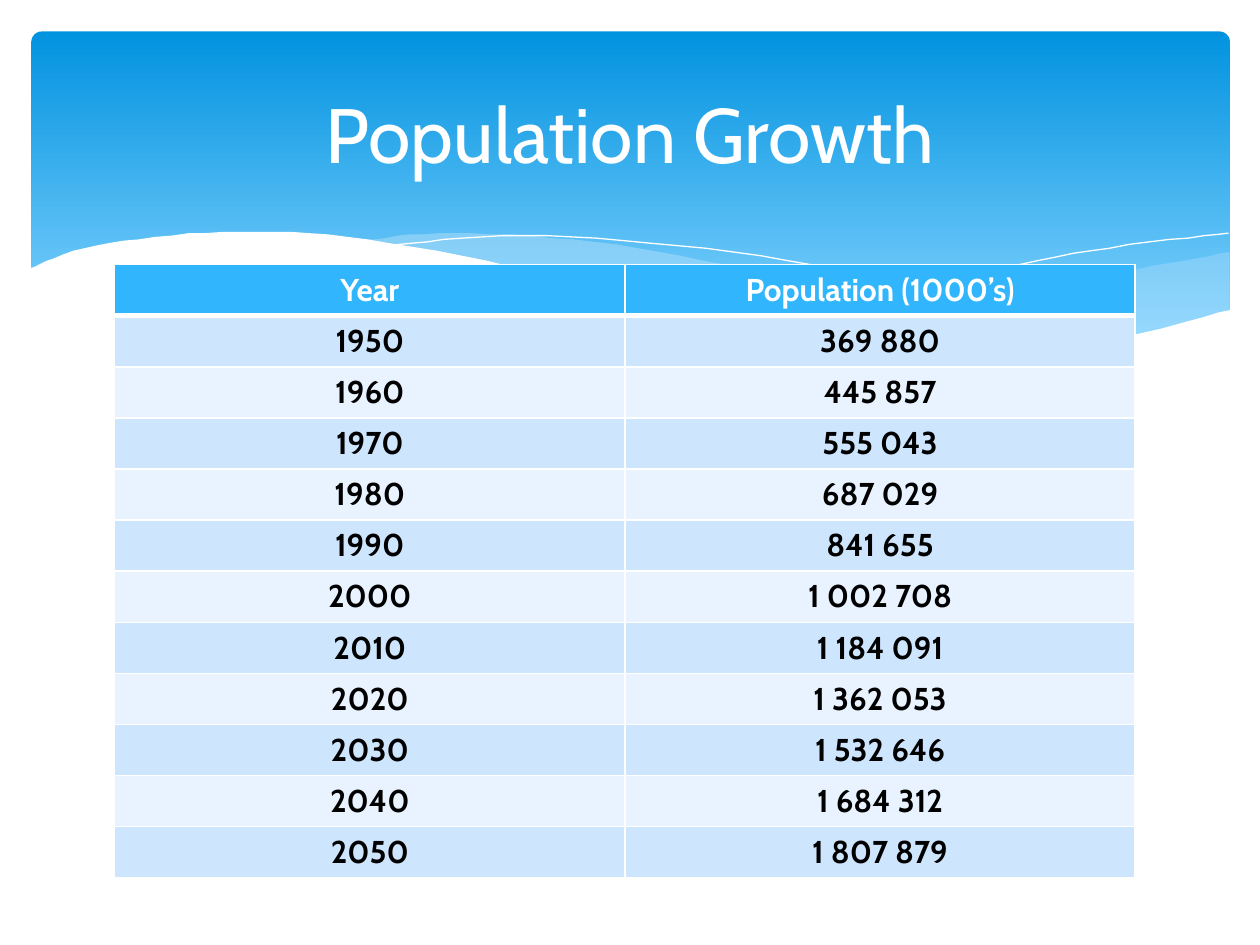
from lxml import etree
from pptx import Presentation
from pptx import util as u
from pptx.dml.color import RGBColor
from pptx.enum import shapes, text
from pptx.oxml import ns

PX = 9144
HUES = {"top": "0293E0", "low": "83D3FE", "mist": "C6E7FC", "white": "FFFFFF",
        "head": "31B6FD", "odd": "CEE5FE", "even": "E8F3FF", "black": "000000"}
hue = {name: RGBColor.from_string(code) for name, code in HUES.items()}


def style(para, size, color, bold):
    para.alignment = text.PP_ALIGN.CENTER
    para.font.name = "Cabin"
    para.font.size = u.Pt(size)
    para.font.bold = bold
    para.font.color.rgb = hue[color]


def curve(knots, steps=8):
    ends = [knots[0], *knots, knots[-1]]
    dots = [knots[0]]
    for a, b, c, d in zip(ends, ends[1:], ends[2:], ends[3:]):
        for step in range(1, steps + 1):
            t = step / steps
            dots.append(tuple(
                q + t / 2 * (r - p + t * (2 * p - 5 * q + 4 * r - s
                                          + t * (3 * q - p - 3 * r + s)))
                for p, q, r, s in zip(a, b, c, d)))
    return dots


deck = Presentation()
deck.slide_width, deck.slide_height = 1000 * PX, 750 * PX
slide = deck.slides.add_slide(deck.slide_layouts[6])

sky = slide.shapes.add_shape(shapes.MSO_SHAPE.ROUNDED_RECTANGLE,
                             25 * PX, 25 * PX, 951 * PX, 270 * PX)
sky.adjustments[0] = 0.03
sky.shadow.inherit = False
sky.line.fill.background()
sky.fill.gradient()
sky.fill.gradient_angle = 270
for stop, name, place in zip(sky.fill.gradient_stops, ("top", "low"), (0, 0.9)):
    stop.color.rgb = hue[name]
    stop.position = place

waves = [
    ("mist", 29,
     curve([(976, 200), (891, 216), (805, 237), (661, 265)])
     + curve([(661, 265), (745, 275), (835, 277), (913, 267), (976, 247)])),
    ("mist", 40,
     curve([(893, 273), (775, 254), (629, 222), (489, 194), (361, 185), (286, 191)])
     + curve([(286, 191), (449, 222), (601, 255), (722, 274), (838, 278), (893, 273)])),
    ("line", 100, curve([(309, 195), (416, 187), (582, 200), (760, 233), (907, 272)])),
    ("line", 100, curve([(613, 257), (748, 223), (866, 199), (975, 185)])),
    ("white", 100,
     curve([(23, 213), (76, 195), (177, 184), (292, 190), (447, 220),
            (603, 254), (726, 272), (850, 275), (977, 246)])
     + [(977, 329), (23, 329)]),
]
for kind, alpha, dots in waves:
    path = slide.shapes.build_freeform(*dots[0], scale=PX)
    path.add_line_segments(dots[1:], close=kind != "line")
    wave = path.convert_to_shape()
    wave.shadow.inherit = False
    if kind == "line":
        wave.fill.background()
        wave.line.color.rgb = hue["white"]
        wave.line.width = 0
        continue
    wave.line.fill.background()
    wave.fill.solid()
    wave.fill.fore_color.rgb = hue[kind]
    if alpha < 100:
        tint = wave.element.spPr.find(ns.qn("a:solidFill"))[0]
        etree.SubElement(tint, ns.qn("a:alpha"), val=str(alpha * 1000))

counts = ["369 880", "445 857", "555 043", "687 029", "841 655", "1 002 708",
          "1 184 091", "1 362 053", "1 532 646", "1 684 312", "1 807 879"]
rows = [("Year", "Population (1000’s)")]
rows += [(str(1950 + 10 * i), count) for i, count in enumerate(counts)]
grid = slide.shapes.add_table(len(rows), 2, 91 * PX, 210 * PX, 810 * PX, 487 * PX).table
for r, row in enumerate(rows):
    for c, value in enumerate(row):
        cell = grid.cell(r, c)
        cell.text = value
        style(cell.text_frame.paragraphs[0], 18, "black" if r else "white", True)
        props = cell._tc.get_or_add_tcPr()
        for side in "LRTB":
            thick = (r, side) in ((0, "B"), (1, "T"))
            edge = etree.SubElement(props, ns.qn("a:ln" + side),
                                    w=str(u.Pt(3 if thick else 1)))
            paint = etree.SubElement(edge, ns.qn("a:solidFill"))
            etree.SubElement(paint, ns.qn("a:srgbClr"), val=HUES["white"])
        cell.fill.solid()
        cell.fill.fore_color.rgb = hue[("even", "odd")[r % 2] if r else "head"]

title = slide.shapes.add_textbox(50 * PX, 37 * PX, 900 * PX, 137 * PX).text_frame
title.word_wrap = True
title.vertical_anchor = text.MSO_ANCHOR.MIDDLE
title.text = "Population Growth"
style(title.paragraphs[0], 44, "white", False)

deck.save("out.pptx")
